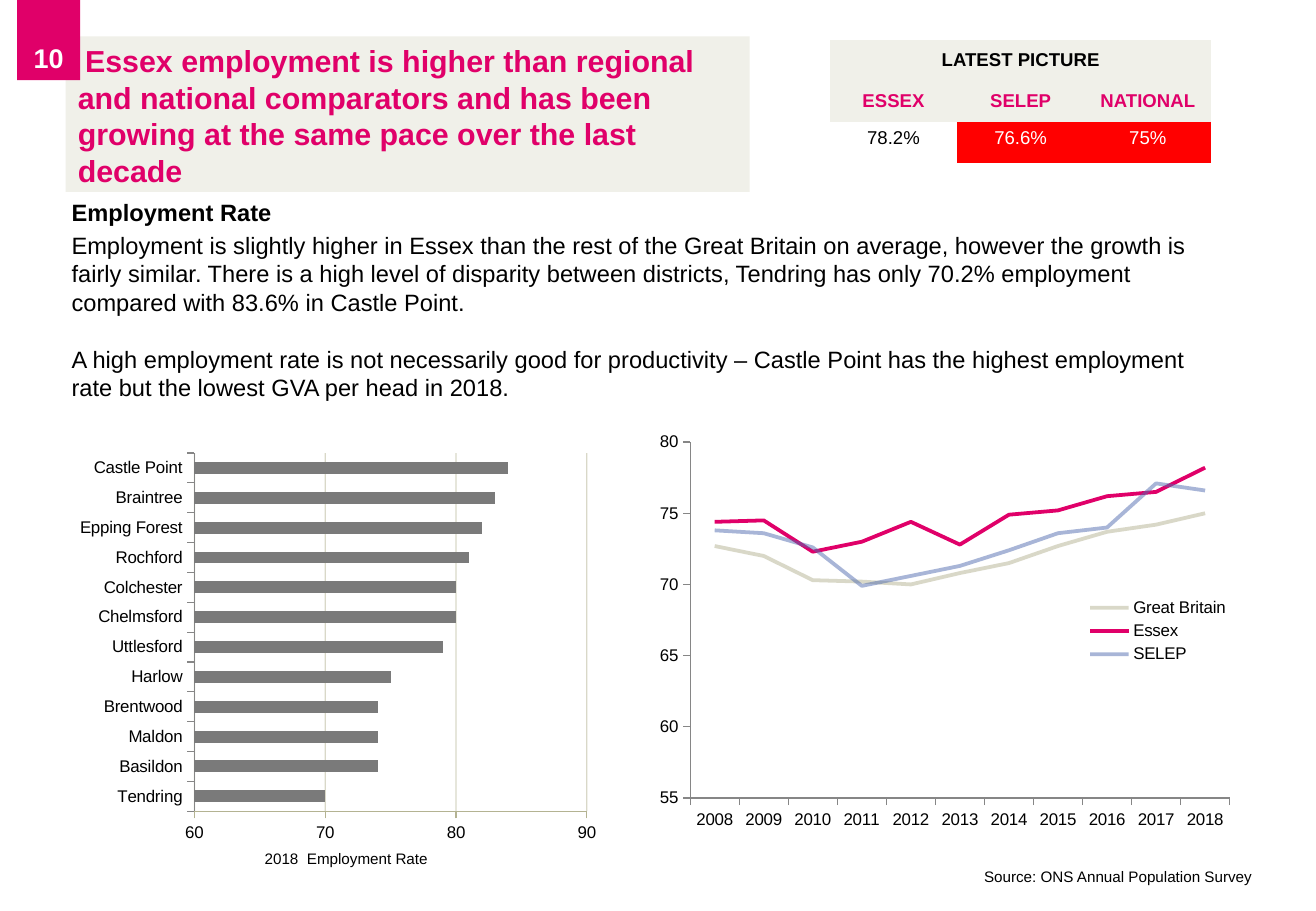
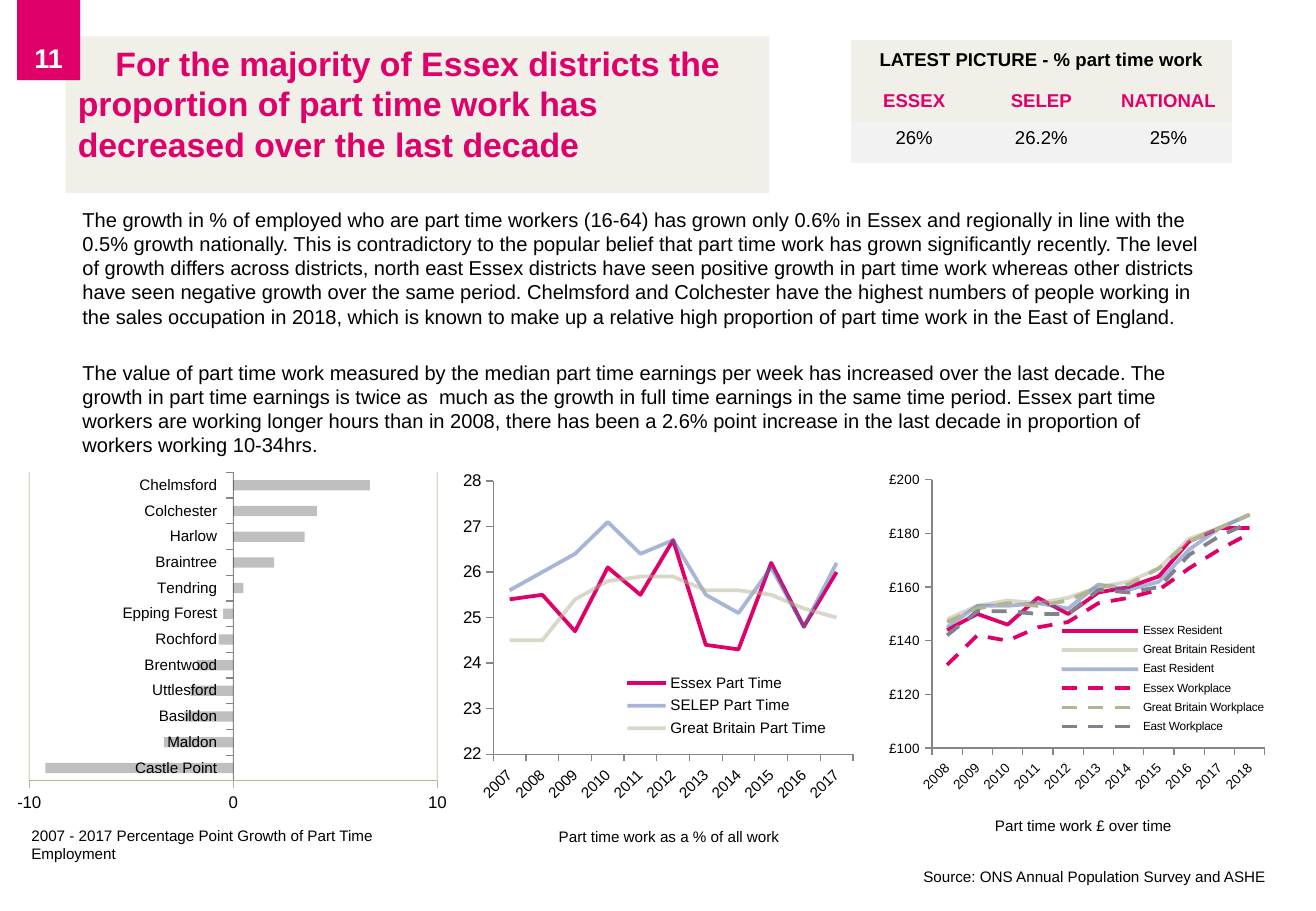
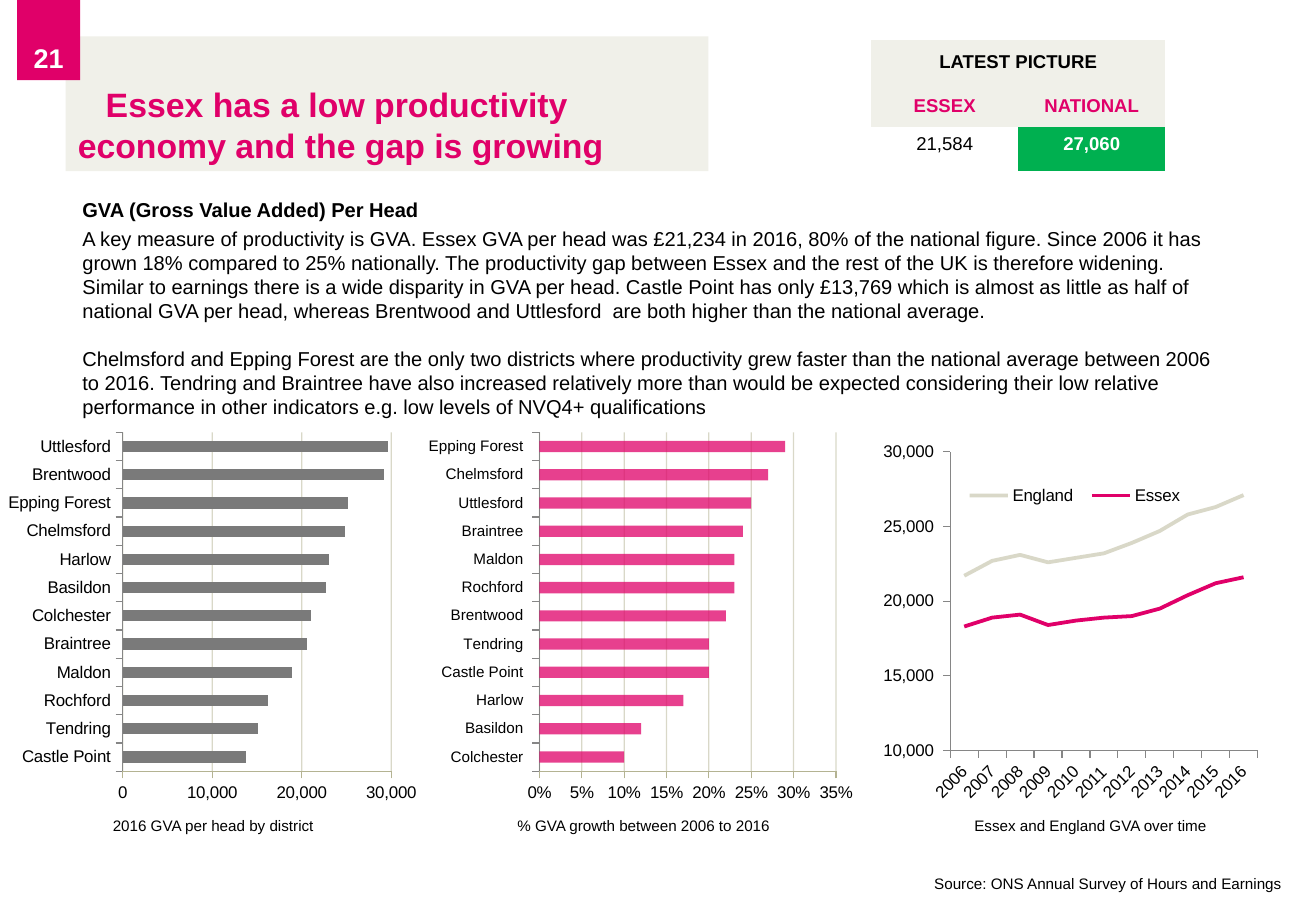
import lxml.etree
import pptx
import pptx.chart.data
import pptx.dml.color
import pptx.enum.chart
import pptx.enum.dml
import pptx.enum.shapes
import pptx.enum.text
import pptx.oxml.ns
import pptx.util

Inches = pptx.util.Inches
Pt = pptx.util.Pt
qn = pptx.oxml.ns.qn
Anchor = pptx.enum.text.MSO_ANCHOR
Align = pptx.enum.text.PP_ALIGN
ChartType = pptx.enum.chart.XL_CHART_TYPE

# Shared look
FONT = "Arial"
PINK, BLUE, SAND = "E00069", "526DB0", "B4B392"
PANEL, PALE, BLACK, WHITE = "F0F0E9", "F2F2F2", "000000", "FFFFFF"
GREY, SLATE, AXIS = "7A7A7A", "808290", "868686"
RED, GREEN = "FF0000", "00B050"
NO_STYLE_TABLE = "{2D5ABB26-0587-4C30-8999-92F81FD0307C}"

# Series looks: colour, opacity in percent, dashed
ESSEX, BRITAIN, REGION = (PINK, 100, False), (SAND, 50, False), (BLUE, 50, False)
ESSEX_WORK, BRITAIN_WORK, REGION_WORK = (PINK, 100, True), (SAND, 100, True), (SLATE, 100, True)


def rgb(color):
    return pptx.dml.color.RGBColor.from_string(color)


def fade(element, opacity):
    """Set the opacity of every colour inside an element."""
    if opacity < 100:
        for color in element.iter(qn("a:srgbClr")):
            lxml.etree.SubElement(color, qn("a:alpha"), val=str(opacity * 1000))


def fill_with(item, color):
    item.fill.solid()
    item.fill.fore_color.rgb = rgb(color)


def style(para, size, color=BLACK, bold=False, align=Align.LEFT):
    para.alignment = align
    for span in para.runs:
        span.font.name = FONT
        span.font.size = Pt(size)
        span.font.bold = bold
        span.font.color.rgb = rgb(color)


def place(shape, box):
    shape.left, shape.top, shape.width, shape.height = (Inches(v) for v in box)


# Page furniture
def add_title(page, box, text, size, indent, anchor=Anchor.TOP):
    title = page.shapes.title
    place(title, box)
    fill_with(title, PANEL)
    frame = title.text_frame
    frame.text = text
    frame.word_wrap = True
    frame.auto_size = pptx.enum.text.MSO_AUTO_SIZE.NONE
    frame.vertical_anchor = anchor
    para = frame.paragraphs[0]
    style(para, size, PINK, True)
    para._p.get_or_add_pPr().set("indent", str(Inches(indent)))


def add_page_number(page, number):
    tab = page.shapes.add_shape(
        pptx.enum.shapes.MSO_SHAPE.RECTANGLE, *(Inches(v) for v in (0.14, 0, 0.52, 0.66)))
    tab.shadow.inherit = False
    fill_with(tab, PINK)
    tab.line.fill.background()
    tab.text_frame.text = str(number)
    tab.text_frame.vertical_anchor = Anchor.BOTTOM
    style(tab.text_frame.paragraphs[0], 16, WHITE, True, Align.CENTER)


def add_text(page, box, paragraphs, size):
    """Paragraphs are (text, bold, space before in points)."""
    frame = page.shapes.add_textbox(*(Inches(v) for v in box)).text_frame
    frame.word_wrap = True
    for index, (text, bold, gap) in enumerate(paragraphs):
        para = frame.add_paragraph() if index else frame.paragraphs[0]
        para.text = text
        para.space_before = Pt(gap)
        style(para, size, bold=bold)


def add_note(page, left, top, text, width=2.84):
    add_text(page, (left, top, width, 0.3), [(text, False, 0)], 9)


def add_latest(page, box, heading, figures):
    """Figures are (area, value, fill, colour, bold), one for each column."""
    frame = page.shapes.add_table(3, len(figures), *(Inches(v) for v in box))
    table = frame.table
    table.first_row = table.horz_banding = False
    table._tbl.tblPr.find(qn("a:tableStyleId")).text = NO_STYLE_TABLE

    def write(row, column, text, fill, color, bold):
        cell = table.cell(row, column)
        cell.text = text
        cell.vertical_anchor = Anchor.TOP if row == 2 else Anchor.MIDDLE
        style(cell.text_frame.paragraphs[0], 11, color, bold, Align.CENTER)
        if fill:
            fill_with(cell, fill)
        else:
            cell.fill.background()

    table.cell(0, 0).merge(table.cell(0, len(figures) - 1))
    write(0, 0, heading, PANEL, BLACK, True)
    for column, (area, value, fill, color, bold) in enumerate(figures):
        write(1, column, area, PANEL, PINK, True)
        write(2, column, value, fill, color, bold)


# Charts
def add_layout(parent, position, area, box, inner=False):
    """Fix a part of a chart; area is in inches within the chart box."""
    for old in parent.findall(qn("c:layout")):
        parent.remove(old)
    layout = lxml.etree.Element(qn("c:layout"))
    manual = lxml.etree.SubElement(layout, qn("c:manualLayout"))
    settings = [("layoutTarget", "inner")] if inner else []
    settings += [("xMode", "edge"), ("yMode", "edge")]
    settings += [(key, f"{area[i] / box[2 + i % 2]:.4f}") for i, key in enumerate("xywh")]
    for key, value in settings:
        lxml.etree.SubElement(manual, qn("c:" + key), val=value)
    parent.insert(position, layout)


def format_axis(axis, size, color):
    axis.tick_labels.font.size = Pt(size)
    axis.format.line.color.rgb = rgb(color)
    axis.format.line.width = Pt(0.75)
    axis.major_tick_mark = pptx.enum.chart.XL_TICK_MARK.OUTSIDE
    axis.has_major_gridlines = False


def add_chart(page, kind, box, plot, categories, series, scale, sizes, number, axis_color):
    """Series are (name, values); scale is (low, high, step)."""
    data = pptx.chart.data.CategoryChartData()
    data.categories = categories
    for name, values in series:
        data.add_series(name, values)
    chart = page.shapes.add_chart(kind, *(Inches(v) for v in box), data).chart
    chart.has_title = chart.has_legend = False
    chart.font.name = FONT
    chart.font.size = Pt(10)
    chart.font.color.rgb = rgb(BLACK)
    format_axis(chart.category_axis, sizes[0], AXIS)
    axis = chart.value_axis
    format_axis(axis, sizes[1], axis_color)
    axis.minimum_scale, axis.maximum_scale, axis.major_unit = scale
    axis.tick_labels.number_format = number
    axis.tick_labels.number_format_is_linked = False
    if axis._element.find(qn("c:crossBetween")) is None:
        between = lxml.etree.Element(qn("c:crossBetween"), val="between")
        axis._element.find(qn("c:crosses")).addnext(between)
    add_layout(chart._chartSpace.chart.plotArea, 0, plot, box, inner=True)
    return chart


def add_bars(page, box, plot, bars, scale, color=GREY, opacity=100, label_size=10, number="0"):
    """Bars map each district to its value, from the bottom up."""
    chart = add_chart(page, ChartType.BAR_CLUSTERED, box, plot, list(bars),
                      [("Series 1", list(bars.values()))], scale, (label_size, 10), number, SAND)
    chart.plots[0].gap_width = 150
    chart.plots[0].vary_by_categories = False
    series = chart.plots[0].series[0]
    series.invert_if_negative = False
    fill_with(series.format, color)
    fade(series._element, opacity)
    axis = chart.value_axis
    axis.has_major_gridlines = True
    axis.major_gridlines.format.line.color.rgb = rgb(SAND)
    axis.major_gridlines.format.line.width = Pt(0.75)
    fade(axis._element.find(qn("c:majorGridlines")), 50)


def add_lines(page, box, plot, legend_box, first_year, lines, scale,
              sizes=(10, 10, 10), number="0", slant=True):
    """Lines are (name, look, values); sizes are for categories, values, legend."""
    years = [str(first_year + i) for i in range(len(lines[0][2]))]
    chart = add_chart(page, ChartType.LINE, box, plot, years,
                      [(name, values) for name, look, values in lines],
                      scale, sizes, number, AXIS)
    for series, (name, (color, opacity, dashed), values) in zip(chart.plots[0].series, lines):
        series.smooth = False
        series.format.line.color.rgb = rgb(color)
        series.format.line.width = Pt(2.25)
        if dashed:
            series.format.line.dash_style = pptx.enum.dml.MSO_LINE.DASH
        fade(series._element, opacity)
    labels = chart.category_axis._element.find(qn("c:txPr")).find(qn("a:bodyPr"))
    labels.set("rot", "-2700000" if slant else "0")
    chart.has_legend = True
    chart.legend.position = pptx.enum.chart.XL_LEGEND_POSITION.RIGHT
    chart.legend.include_in_layout = True
    chart.legend.font.size = Pt(sizes[2])
    add_layout(chart.legend._element, 1, legend_box, box)


# Slides
def build_employment(page):
    add_title(page, (0.54, 0.3, 5.63, 1.28),
              "Essex employment is higher than regional and national comparators and has been "
              "growing at the same pace over the last decade", 18, 0.06)
    add_latest(page, (6.83, 0.33, 3.14, 1.01), "LATEST PICTURE", [
        ("ESSEX", "78.2%", None, BLACK, False),
        ("SELEP", "76.6%", RED, WHITE, False),
        ("NATIONAL", "75%", RED, WHITE, False)])
    add_text(page, (0.49, 1.58, 9.51, 1.85), [
        ("Employment Rate", True, 0),
        ("Employment is slightly higher in Essex than the rest of the Great Britain on average, "
         "however the growth is fairly similar. There is a high level of disparity between "
         "districts, Tendring has only 70.2% employment compared with 83.6% in Castle Point.",
         False, 2.8),
        ("A high employment rate is not necessarily good for productivity – Castle Point has the "
         "highest employment rate but the lowest GVA per head in 2018.", False, 17)], 14)
    add_bars(page, (0.58, 3.67, 4.42, 3.33), (1.02, 0.06, 3.23, 2.95), {
        "Tendring": 70, "Basildon": 74, "Maldon": 74, "Brentwood": 74, "Harlow": 75,
        "Uttlesford": 79, "Chelmsford": 80, "Colchester": 80, "Rochford": 81,
        "Epping Forest": 82, "Braintree": 83, "Castle Point": 84}, (60, 90, 10))
    add_lines(page, (5.33, 3.5, 4.89, 3.4), (0.35, 0.14, 4.44, 2.93), (3.6, 1.39, 1.2, 0.61), 2008, [
        ("Great Britain", BRITAIN,
         [72.7, 72, 70.3, 70.2, 70, 70.8, 71.5, 72.7, 73.7, 74.2, 75]),
        ("Essex", ESSEX, [74.4, 74.5, 72.3, 73, 74.4, 72.8, 74.9, 75.2, 76.2, 76.5, 78.2]),
        ("SELEP", REGION, [73.8, 73.6, 72.6, 69.9, 70.6, 71.3, 72.4, 73.6, 74, 77.1, 76.6])],
        (55, 80, 5), slant=False)
    add_note(page, 2.08, 6.94, "2018  Employment Rate")
    add_note(page, 8, 7.09, "Source: ONS Annual Population Survey", 2.83)


def build_part_time(page):
    add_title(page, (0.54, 0.3, 5.79, 1.29),
              "For the majority of Essex districts the proportion of part time work has "
              "decreased over the last decade", 20, 0.31)
    add_latest(page, (7, 0.33, 3.14, 1.01), "LATEST PICTURE - % part time work", [
        (area, value, PALE, BLACK, False) for area, value in
        (("ESSEX", "26%"), ("SELEP", "26.2%"), ("NATIONAL", "25%"))])
    add_text(page, (0.58, 1.66, 9.51, 1.85), [
        ("The growth in % of employed who are part time workers (16-64) has grown only 0.6% in "
         "Essex and regionally in line with the 0.5% growth nationally. This is contradictory to "
         "the popular belief that part time work has grown significantly recently. The level of "
         "growth differs across districts, north east Essex districts have seen positive growth "
         "in part time work whereas other districts have seen negative growth over the same "
         "period. Chelmsford and Colchester have the highest numbers of people working in the "
         "sales occupation in 2018, which is known to make up a relative high proportion of part "
         "time work in the East of England.", False, 0),
        ("The value of part time work measured by the median part time earnings per week has "
         "increased over the last decade. The growth in part time earnings is twice as  much as "
         "the growth in full time earnings in the same time period. Essex part time workers are "
         "working longer hours than in 2008, there has been a 2.6% point increase in the last "
         "decade in proportion of workers working 10-34hrs.", False, 19)], 11.9)
    add_bars(page, (0.07, 3.83, 3.67, 2.92), (0.17, 0.06, 3.36, 2.54), {
        "Castle Point ": -9.2, "Maldon ": -3.4, "Basildon ": -2.4, "Uttlesford ": -2.1,
        "Brentwood ": -1.8, "Rochford ": -0.7, "Epping Forest ": -0.5, "Tendring ": 0.5,
        "Braintree ": 2, "Harlow ": 3.5, "Colchester ": 4.1, "Chelmsford ": 6.7},
        (-10, 10, 10), BLACK, 25, 9)
    add_lines(page, (3.75, 3.83, 3.34, 2.84), (0.31, 0.13, 2.96, 2.25), (1.38, 1.68, 1.7, 0.6), 2007, [
        ("Essex Part Time", ESSEX,
         [25.4, 25.5, 24.7, 26.1, 25.5, 26.7, 24.4, 24.3, 26.2, 24.8, 26]),
        ("SELEP Part Time", REGION,
         [25.6, 26, 26.4, 27.1, 26.4, 26.7, 25.5, 25.1, 26.1, 24.8, 26.2]),
        ("Great Britain Part Time", BRITAIN,
         [24.5, 24.5, 25.4, 25.8, 25.9, 25.9, 25.6, 25.6, 25.5, 25.2, 25])],
        (22, 28, 1), (9, 10, 9))
    add_lines(page, (7.25, 3.83, 3.22, 2.75), (0.42, 0.12, 2.74, 2.21), (1.46, 1.26, 1.72, 1), 2008, [
        ("Essex Resident", ESSEX, [144, 150, 146, 156, 150, 158, 160, 164, 177, 182, 182]),
        ("Great Britain Resident", BRITAIN,
         [148, 153, 155, 154, 156, 160, 162, 167, 178, 182, 187]),
        ("East Resident", REGION, [145, 153, 153, 154, 152, 161, 159, 162, 174, 182, 187]),
        ("Essex Workplace", ESSEX_WORK,
         [131, 142, 140, 145, 147, 154, 156, 159, 167, 174, 180]),
        ("Great Britain Workplace", BRITAIN_WORK,
         [147, 152, 154, 153, 155, 160, 161, 167, 177, 182, 187]),
        ("East Workplace", REGION_WORK,
         [142, 151, 151, 150, 150, 159, 158, 160, 172, 179, 184])],
        (100, 200, 20), (8, 8, 7), '"£"#,##0')
    add_note(page, 0.16, 6.75, "2007 - 2017 Percentage Point Growth of Part Time Employment", 3.51)
    add_note(page, 4.5, 6.76, "Part time work as a % of all work")
    add_note(page, 8.09, 6.67, "Part time work £ over time", 2)
    add_note(page, 7.5, 7.09, "Source: ONS Annual Population Survey and ASHE", 3.3)


def build_productivity(page):
    add_title(page, (0.54, 0.3, 5.29, 1.11),
              "Essex has a low productivity economy and the gap is growing", 20, 0.23,
              Anchor.BOTTOM)
    add_latest(page, (7.17, 0.33, 2.42, 1.08), "LATEST PICTURE", [
        ("ESSEX", "21,584", None, BLACK, False),
        ("NATIONAL", "27,060", GREEN, WHITE, True)])
    add_text(page, (0.58, 1.58, 9.51, 1.85), [
        ("GVA (Gross Value Added) Per Head", True, 0),
        ("A key measure of productivity is GVA. Essex GVA per head was £21,234 in 2016, 80% of "
         "the national figure. Since 2006 it has grown 18% compared to 25% nationally. The "
         "productivity gap between Essex and the rest of the UK is therefore widening.  Similar "
         "to earnings there is a wide disparity in GVA per head. Castle Point has only £13,769 "
         "which is almost as little as half of national GVA per head, whereas Brentwood and "
         "Uttlesford  are both higher than the national average.", False, 2.4),
        ("Chelmsford and Epping Forest are the only two districts where productivity grew faster "
         "than the national average between 2006 to 2016. Tendring and Braintree have also "
         "increased relatively more than would be expected considering their low relative "
         "performance in other indicators e.g. low levels of NVQ4+ qualifications",
         False, 14),
        (".", False, 2.4)], 11.9)
    add_bars(page, (0, 3.5, 3.5, 3.17), (1.01, 0.06, 2.21, 2.79), {
        "Castle Point": 13800, "Tendring": 15100, "Rochford": 16200, "Maldon": 18900,
        "Braintree": 20600, "Colchester": 21100, "Basildon": 22700, "Harlow": 23100,
        "Chelmsford": 24800, "Epping Forest": 25200, "Brentwood": 29200,
        "Uttlesford": 29700}, (0, 30000, 10000), number="#,##0")
    add_bars(page, (3.5, 3.5, 3.59, 3.17), (0.94, 0.06, 2.44, 2.79), {
        "Colchester ": 0.1, "Basildon ": 0.12, "Harlow ": 0.17, "Castle Point ": 0.2,
        "Tendring ": 0.2, "Brentwood ": 0.22, "Rochford ": 0.23, "Maldon ": 0.23,
        "Braintree ": 0.24, "Uttlesford ": 0.25, "Chelmsford ": 0.27,
        "Epping Forest ": 0.29}, (0, 0.35, 0.05), PINK, 75, 9, "0%")
    add_lines(page, (7.17, 3.58, 3.26, 3.08), (0.65, 0.14, 2.53, 2.46), (0.7, 0.39, 1.95, 0.22), 2006, [
        ("England", BRITAIN,
         [21700, 22700, 23100, 22600, 22900, 23200, 23900, 24700, 25800, 26300, 27100]),
        ("Essex", ESSEX,
         [18300, 18900, 19100, 18400, 18700, 18900, 19000, 19500, 20400, 21200, 21600])],
        (10000, 30000, 5000), number="#,##0_-")
    add_note(page, 0.83, 6.67, "2016 GVA per head by district")
    add_note(page, 4.16, 6.67, "% GVA growth between 2006 to 2016")
    add_note(page, 7.92, 6.67, "Essex and England GVA over time")
    add_note(page, 7.59, 7.15, "Source: ONS Annual Survey of Hours and Earnings", 3.2)


def main():
    deck = pptx.Presentation()
    deck.slide_width, deck.slide_height = Inches(10.83), Inches(7.5)
    title_only = deck.slide_layouts[5]
    for number, build in ((10, build_employment), (11, build_part_time), (21, build_productivity)):
        page = deck.slides.add_slide(title_only)
        build(page)
        add_page_number(page, number)
    deck.save("out.pptx")


if __name__ == "__main__":
    main()
